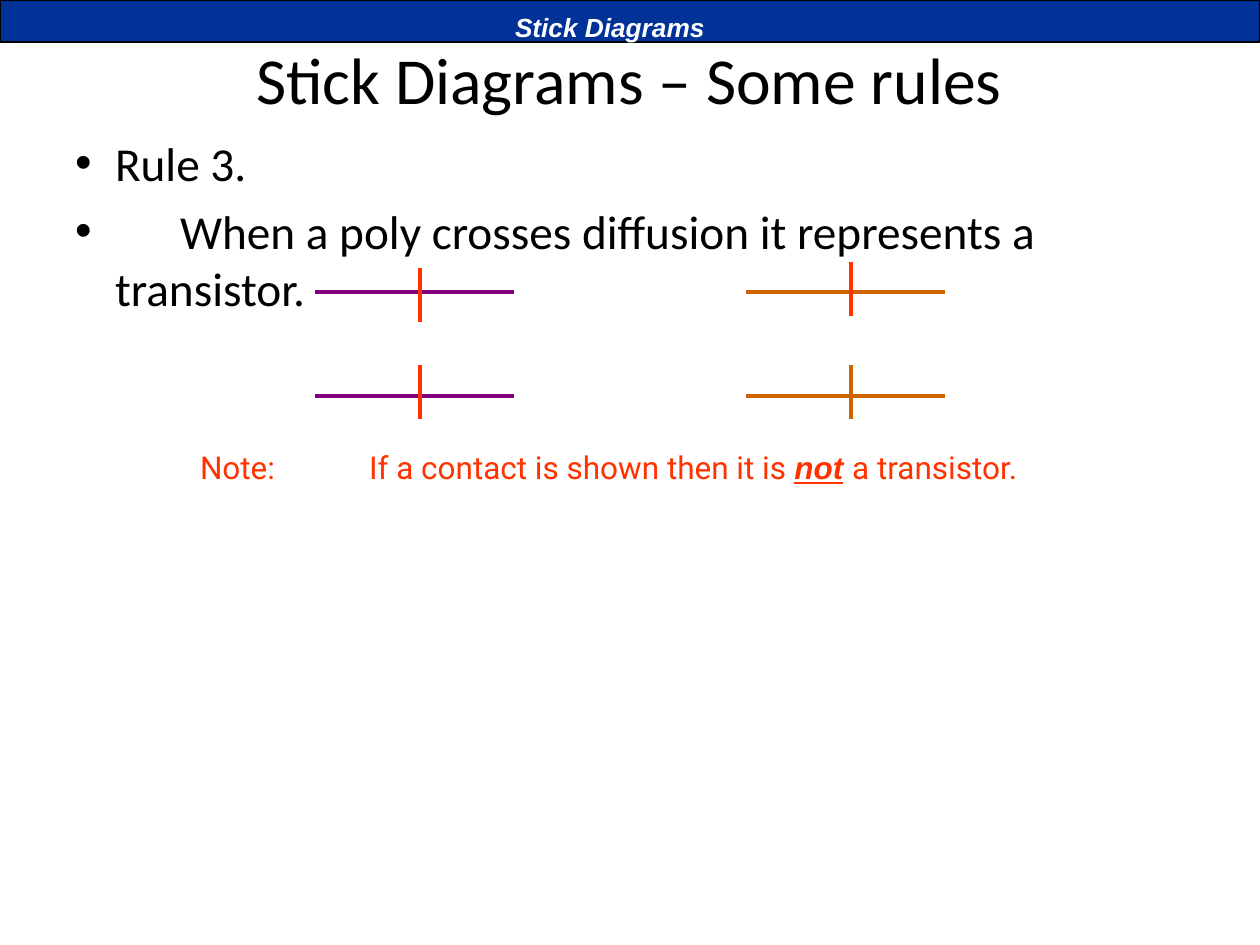
from dataclasses import dataclass
from lxml.etree import SubElement
from pptx import Presentation
from pptx.dml.color import RGBColor
from pptx.enum.shapes import MSO_CONNECTOR, MSO_SHAPE
from pptx.enum.text import MSO_ANCHOR, PP_ALIGN
from pptx.oxml.ns import qn
from pptx.util import Pt


@dataclass(frozen=True)
class Theme:
    bar: str = "003298"
    black: str = "000000"
    white: str = "FFFFFF"
    poly: str = "FF3200"
    purple: str = "7F007F"
    orange: str = "CC6500"
    heading_font: str = "Calibri"
    note_font: str = "Roboto"
    header_font: str = "Arial"
    title_size: float = 37.5
    body_size: float = 27
    note_size: float = 18
    header_size: float = 15
    stick_width: float = 2.55
    border_width: float = 0.64


THEME = Theme()
EMU_PER_PX = 914400 / 126

# Content
HEADER = "Stick Diagrams"
TITLE = "Stick Diagrams – Some rules"
RULES = ["Rule 3.", "\tWhen a poly crosses diffusion it represents a transistor."]
NOTE = ["Note:\tIf a contact is shown then it is ", "not", " ", "a transistor."]

# Crossings: left, middle height, top of the upright, diffusion colour, upright colour
STICK_LENGTH, UPRIGHT_LENGTH, UPRIGHT_OFFSET = 199, 54, 105
CROSSINGS = [
    (315, 292, 268, THEME.purple, THEME.poly),
    (746, 292, 262, THEME.orange, THEME.poly),
    (315, 396, 365, THEME.purple, THEME.poly),
    (746, 396, 365, THEME.orange, THEME.orange),
]


def px(value):
    return round(value * EMU_PER_PX)


def add_text_box(slide, box, top_inset=0, side_inset=0):
    shape = slide.shapes.add_textbox(*map(px, box))
    frame = shape.text_frame
    frame.word_wrap = True
    frame.margin_left = frame.margin_right = px(side_inset)
    frame.margin_top, frame.margin_bottom = px(top_inset), 0
    return frame


def format_runs(paragraph, font_name, size, color, bold=False, italic=False):
    for run in paragraph.runs:
        font = run.font
        font.name, font.size = font_name, Pt(size)
        font.bold, font.italic = bold, italic
        font.color.rgb = RGBColor.from_string(color)
        run._r.get_or_add_rPr().set("kern", "0")


def set_indent(paragraph, left, first_line, tabs, bullet=None):
    properties = paragraph._p.get_or_add_pPr()
    properties.set("marL", str(px(left)))
    properties.set("indent", str(px(first_line)))
    if bullet:
        SubElement(properties, qn("a:buFont"), typeface=THEME.header_font)
        SubElement(properties, qn("a:buChar"), char=bullet)
    tab_list = SubElement(properties, qn("a:tabLst"))
    for tab in tabs:
        SubElement(tab_list, qn("a:tab"), pos=str(px(tab)), algn="l")


def style_stick(shape, color):
    shape.line.color.rgb = RGBColor.from_string(color)
    shape.line.width = Pt(THEME.stick_width)


def add_stick(slide, start, end, color):
    line = slide.shapes.add_connector(MSO_CONNECTOR.STRAIGHT, *map(px, start + end))
    style_stick(line, color)
    SubElement(line._element.spPr, qn("a:effectLst"))


def add_cross(slide, sticks, color):
    (start, end), (top, bottom) = sticks
    builder = slide.shapes.build_freeform(*start, scale=EMU_PER_PX)
    builder.add_line_segments([end], close=False)
    builder.move_to(*top)
    builder.add_line_segments([bottom], close=False)
    cross = builder.convert_to_shape()
    cross.shadow.inherit = False
    cross.fill.background()
    style_stick(cross, color)


def add_title(slide):
    frame = add_text_box(slide, (189, 37, 881, 81), top_inset=1)
    frame.vertical_anchor = MSO_ANCHOR.MIDDLE
    frame.text = TITLE
    frame.paragraphs[0].alignment = PP_ALIGN.CENTER
    format_runs(frame.paragraphs[0], THEME.heading_font, THEME.title_size, THEME.black)


def add_rules(slide):
    frame = add_text_box(slide, (73, 121, 1104, 199), top_inset=13)
    frame.text = "\n".join(RULES)
    for paragraph in frame.paragraphs:
        format_runs(paragraph, THEME.heading_font, THEME.body_size, THEME.black)
        paragraph.space_before = Pt(6.5)
        set_indent(paragraph, 42, -40, (42, 107), bullet="•")


def add_crossings(slide):
    for left, middle, top, diffusion, upright in CROSSINGS:
        center = left + UPRIGHT_OFFSET
        sticks = [((left, middle), (left + STICK_LENGTH, middle)),
                  ((center, top), (center, top + UPRIGHT_LENGTH))]
        if diffusion == upright:
            add_cross(slide, sticks, diffusion)
            continue
        for (start, end), color in zip(sticks, (diffusion, upright)):
            add_stick(slide, start, end, color)


def add_header(slide):
    bar = slide.shapes.add_shape(MSO_SHAPE.RECTANGLE, 0, 0, px(1260), px(42))
    bar.shadow.inherit = False
    bar.fill.solid()
    bar.fill.fore_color.rgb = RGBColor.from_string(THEME.bar)
    bar.line.color.rgb = RGBColor.from_string(THEME.black)
    bar.line.width = Pt(THEME.border_width)
    frame = add_text_box(slide, (515, 9, 231, 34), top_inset=2)
    frame.text = HEADER
    format_runs(frame.paragraphs[0], THEME.header_font, THEME.header_size,
                THEME.white, bold=True, italic=True)


def add_note(slide):
    frame = add_text_box(slide, (123, 442, 1050, 50), top_inset=6, side_inset=13)
    paragraph = frame.paragraphs[0]
    for text in NOTE:
        paragraph.add_run().text = text
    format_runs(paragraph, THEME.note_font, THEME.note_size, THEME.poly)
    for run in paragraph.runs[1:3]:
        run.font.name = THEME.header_font
        run.font.bold = run.font.italic = True
    paragraph.runs[1].font.underline = True
    set_indent(paragraph, 233, -169, (233,))


def main():
    presentation = Presentation()
    presentation.slide_width, presentation.slide_height = px(1260), px(945)
    slide = presentation.slides.add_slide(presentation.slide_layouts[6])
    for add_part in (add_title, add_rules, add_crossings, add_header, add_note):
        add_part(slide)
    presentation.save("out.pptx")


if __name__ == "__main__":
    main()
